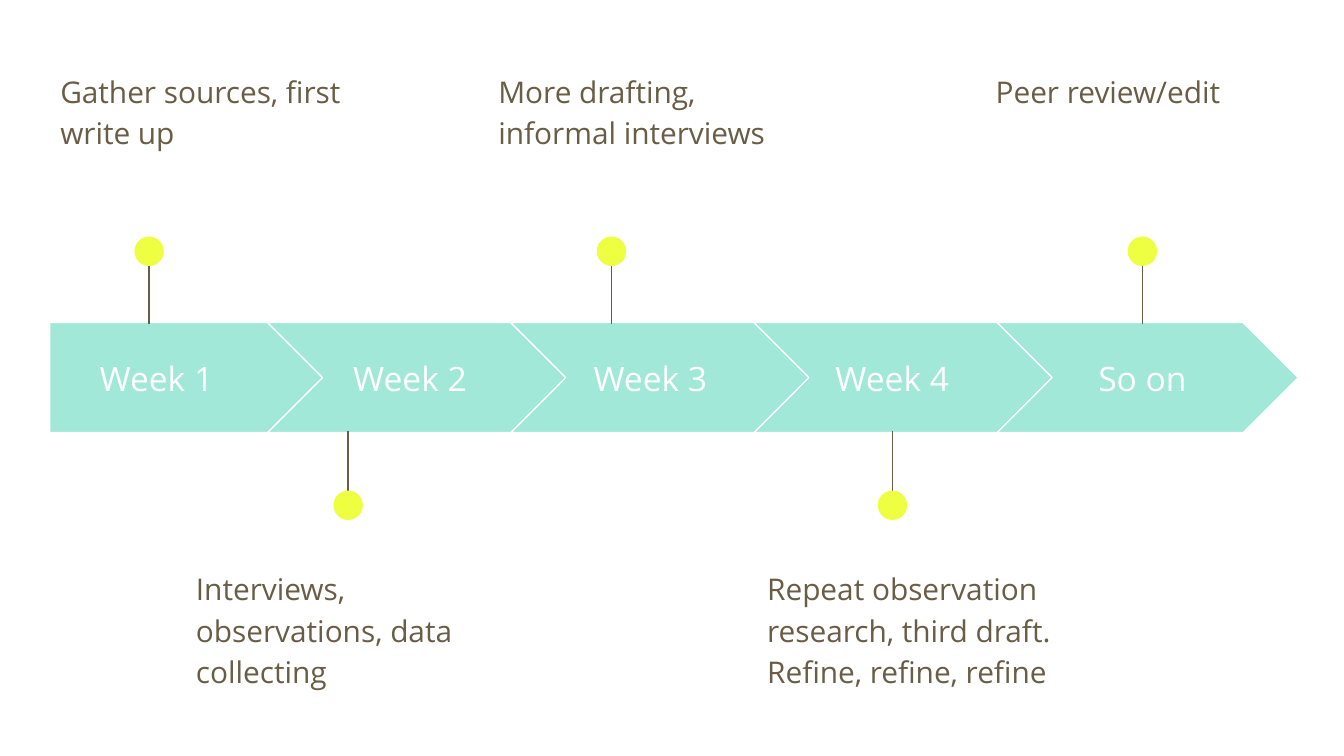
"""Build a five-step project timeline slide with alternating notes."""
from lxml.etree import SubElement
from pptx import Presentation
from pptx.dml.color import RGBColor
from pptx.enum.shapes import MSO_CONNECTOR, MSO_SHAPE
from pptx.enum.text import MSO_ANCHOR as Anchor, PP_ALIGN as Align
from pptx.oxml.ns import qn
from pptx.util import Pt

COLORS = {"band": "A1E8D9", "white": "FFFFFF", "ink": "695D46", "dot": "EEFF41"}
FONT = "Open Sans"

# label, label left, label width, pin centre, note left, note
STEPS = [
    ("Week 1", 26.6, 114.5, 79.9, 25.2, "Gather sources, first write up"),
    ("Week 2", 167.8, 103.7, 186.5, 97.9, "Interviews, observations, data collecting"),
    ("Week 3", 296.6, 103.7, 327.6, 259.9, "More drafting, informal interviews"),
    ("Week 4", 426.2, 103.7, 478.1, 403.9,
     "Repeat observation research, third draft. Refine, refine, refine"),
    ("So on", 560.2, 103.7, 612, 526.3, "Peer review/edit"),
]
ROWS = [
    {"note": 29.5, "dot": 126.7, "start": 129.6, "end": 173.5},
    {"note": 295.9, "dot": 262.8, "start": 275, "end": 231.1},
]
BAND_TOP, BAND_HEIGHT = 172.8, 59
FIRST_LEFT, FIRST_WIDTH = 26.6, 147.6
CHEVRON_LEFT, CHEVRON_WIDTH, CHEVRON_STEP = 143.3, 161.3, 130.3
DOT = 15.8


def color(name):
    return RGBColor.from_string(COLORS[name])


def add_shape(page, kind, left, top, width, height, fill):
    shape = page.shapes.add_shape(kind, Pt(left), Pt(top), Pt(width), Pt(height))
    shape.shadow.inherit = False
    shape.fill.solid()
    shape.fill.fore_color.rgb = color(fill)
    shape.line.fill.background()
    return shape


def add_arrow(page, index):
    if index == 0:
        kind, left, width = MSO_SHAPE.PENTAGON, FIRST_LEFT, FIRST_WIDTH
    else:
        kind, width = MSO_SHAPE.CHEVRON, CHEVRON_WIDTH
        left = CHEVRON_LEFT + (index - 1) * CHEVRON_STEP
    arrow = add_shape(page, kind, left, BAND_TOP, width, BAND_HEIGHT, "band")
    arrow.adjustments[0] = 0.5
    arrow.line.color.rgb = color("white")
    arrow.line.width = Pt(0.75)


def add_text(page, text, left, top, width, height, size, ink):
    box = page.shapes.add_textbox(Pt(left), Pt(top), Pt(width), Pt(height))
    frame = box.text_frame
    frame.word_wrap = True
    frame.margin_left = frame.margin_right = Pt(7.2)
    frame.margin_top = frame.margin_bottom = Pt(7.2)
    para = frame.paragraphs[0]
    para.text = text
    para.font.name = FONT
    para.font.size = Pt(size)
    para.font.color.rgb = color(ink)
    return frame, para


def add_pin(page, center, row):
    stem = page.shapes.add_connector(
        MSO_CONNECTOR.STRAIGHT, Pt(center), Pt(row["start"]), Pt(center), Pt(row["end"]))
    stem.line.color.rgb = color("ink")
    stem.line.width = Pt(0.75)
    SubElement(stem._element.spPr, qn("a:effectLst"))
    add_shape(page, MSO_SHAPE.OVAL, center - DOT / 2, row["dot"], DOT, DOT, "dot")


def main():
    deck = Presentation()
    deck.slide_width, deck.slide_height = Pt(720), Pt(405)
    page = deck.slides.add_slide(deck.slide_layouts[6])
    for index, (label, label_left, label_width, center, note_left, note) in enumerate(STEPS):
        row = ROWS[index % 2]
        add_arrow(page, index)
        frame, para = add_text(
            page, label, label_left, 184.3, label_width, 36.7, 18, "white")
        frame.vertical_anchor = Anchor.MIDDLE
        para.alignment = Align.CENTER
        add_pin(page, center, row)
        frame, para = add_text(page, note, note_left, row["note"], 176.4, 71.3, 16, "ink")
        para.line_spacing = 1.15
        para.space_after = Pt(16)
    deck.save("out.pptx")


if __name__ == "__main__":
    main()
